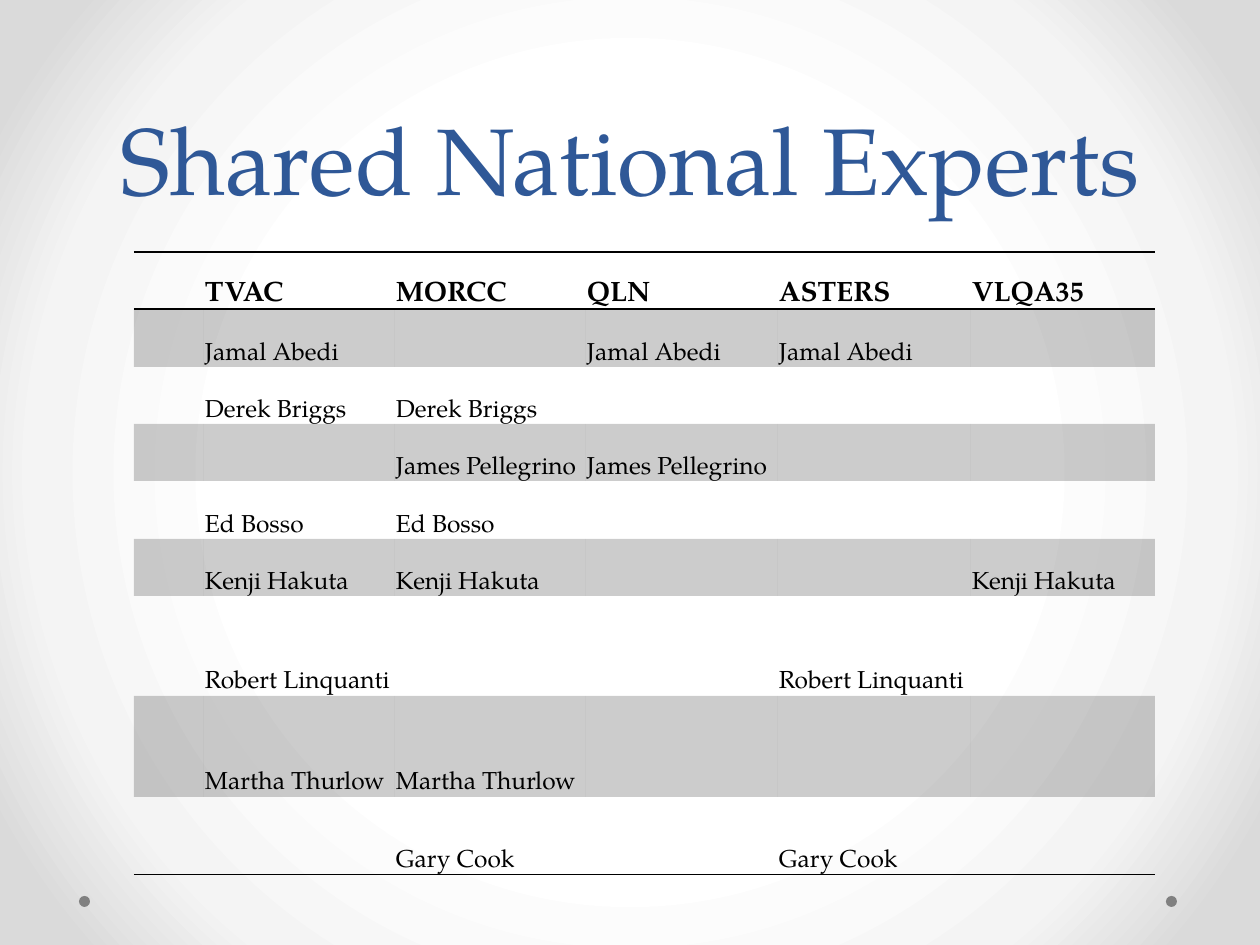
"""Build a slide with a table of experts shared between assessment groups."""
from pptx import Presentation
from pptx.dml.color import RGBColor
from pptx.enum.shapes import MSO_SHAPE
from pptx.enum.text import MSO_ANCHOR, PP_ALIGN
from pptx.oxml import parse_xml
from pptx.oxml.ns import nsdecls, qn
from pptx.util import Emu, Pt

OVAL = MSO_SHAPE.OVAL
BOTTOM = MSO_ANCHOR.BOTTOM
CENTER = PP_ALIGN.CENTER
LEFT = PP_ALIGN.LEFT
FONT = "TeX Gyre Pagella"
BLACK = "000000"
NS = nsdecls("a")
PLAIN = "{2D5ABB26-0587-4C30-8999-92F81FD0307C}"
rgb = RGBColor.from_string


def px(n):
    return Emu(round(n * 914400 / 126))


def write(para, text, size, color, bold=False):
    run = para.add_run()
    run.text = text
    run.font.name = FONT
    run.font.size = Pt(size)
    run.font.bold = bold
    run.font.color.rgb = rgb(color)


prs = Presentation()
prs.slide_width, prs.slide_height = px(1260), px(945)
slide = prs.slides.add_slide(prs.slide_layouts[6])

slide.background.fill.gradient()
grad = slide.element.find(".//" + qn("a:gradFill"))
stops = "".join(
    f'<a:gs pos="{pos}000"><a:srgbClr val="{color}"/></a:gs>'
    for pos, color in [(50, "FFFFFF"), (76, "F4F4F4"), (92, "DADADA")]
)
grad.getparent().replace(grad, parse_xml(
    f'<a:gradFill {NS} rotWithShape="1"><a:gsLst>{stops}</a:gsLst>'
    '<a:path path="circle"><a:fillToRect l="50000" t="50000" r="50000" b="50000"/>'
    "</a:path></a:gradFill>"
))

for left in (1166, 79):
    dot = slide.shapes.add_shape(OVAL, px(left), px(896), px(11), px(11))
    dot.shadow.inherit = False
    dot.fill.solid()
    dot.fill.fore_color.rgb = rgb("808080")
    dot.line.fill.background()

frame = slide.shapes.add_textbox(px(63), px(0), px(1134), px(220)).text_frame
frame.word_wrap = True
frame.vertical_anchor = BOTTOM
frame.margin_bottom = px(6)
title = frame.paragraphs[0]
title.alignment = CENTER
title.line_spacing = Pt(58)
write(title, "Shared National Experts", 54, "2F5897")

rows = [
    ["", "TVAC", "MORCC", "QLN", "ASTERS", "VLQA35"],
    ["", "Jamal Abedi", "", "Jamal Abedi", "Jamal Abedi", ""],
    ["", "Derek Briggs", "Derek Briggs", "", "", ""],
    ["", "", "James Pellegrino", "James Pellegrino", "", ""],
    ["", "Ed Bosso", "Ed Bosso", "", "", ""],
    ["", "Kenji Hakuta", "Kenji Hakuta", "", "", "Kenji Hakuta"],
    ["", "Robert Linquanti", "", "", "Robert Linquanti", ""],
    ["", "Martha Thurlow", "Martha Thurlow", "", "", ""],
    ["", "", "Gary Cook", "", "Gary Cook", ""],
]
widths = [70, 191, 191, 192, 193, 184]
heights = [57, 58, 57] * 2 + [100, 101, 78]
last = len(rows) - 1
edges = {0: ["lnT", "lnB"], last: ["lnB"]}

table = slide.shapes.add_table(
    len(rows), len(widths), px(134), px(252), px(sum(widths)), px(sum(heights))
).table
table.first_row = table.horz_banding = False
table._tbl.tblPr.find(qn("a:tableStyleId")).text = PLAIN
for col, width in zip(table.columns, widths):
    col.width = px(width)

for r, (names, height) in enumerate(zip(rows, heights)):
    table.rows[r].height = px(height)
    for c, name in enumerate(names):
        cell = table.cell(r, c)
        cell.vertical_anchor = BOTTOM
        cell.margin_left = cell.margin_right = px(1)
        cell.margin_top = cell.margin_bottom = 0
        if name:
            para = cell.text_frame.paragraphs[0]
            para.alignment = LEFT
            para.line_spacing = 2.0 if (r, c) == (last, 4) else 1.15
            para.space_after = Pt(0 if (r, c) in [(3, 2), (last, 2)] else 10)
            write(para, name, 14 if r else 16, BLACK, r == 0)
        props = cell._tc.get_or_add_tcPr()
        if r % 2:
            cell.fill.solid()
            cell.fill.fore_color.rgb = rgb(BLACK)
            tint = props.find(".//" + qn("a:srgbClr"))
            tint.append(parse_xml(f'<a:alpha {NS} val="20000"/>'))
        else:
            cell.fill.background()
        for i, edge in enumerate(edges.get(r, [])):
            props.insert(i, parse_xml(
                f'<a:{edge} {NS} w="9525"><a:solidFill>'
                f'<a:srgbClr val="{BLACK}"/></a:solidFill></a:{edge}>'
            ))

prs.save("out.pptx")
